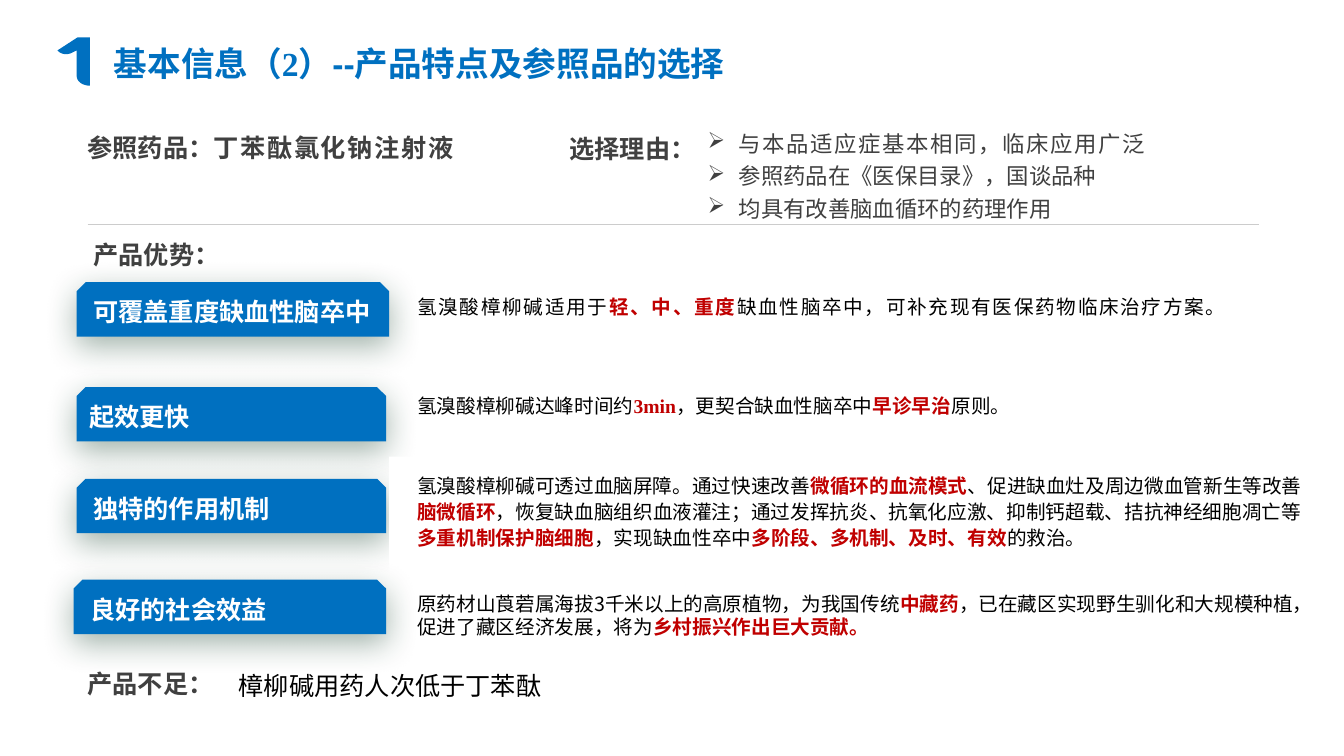
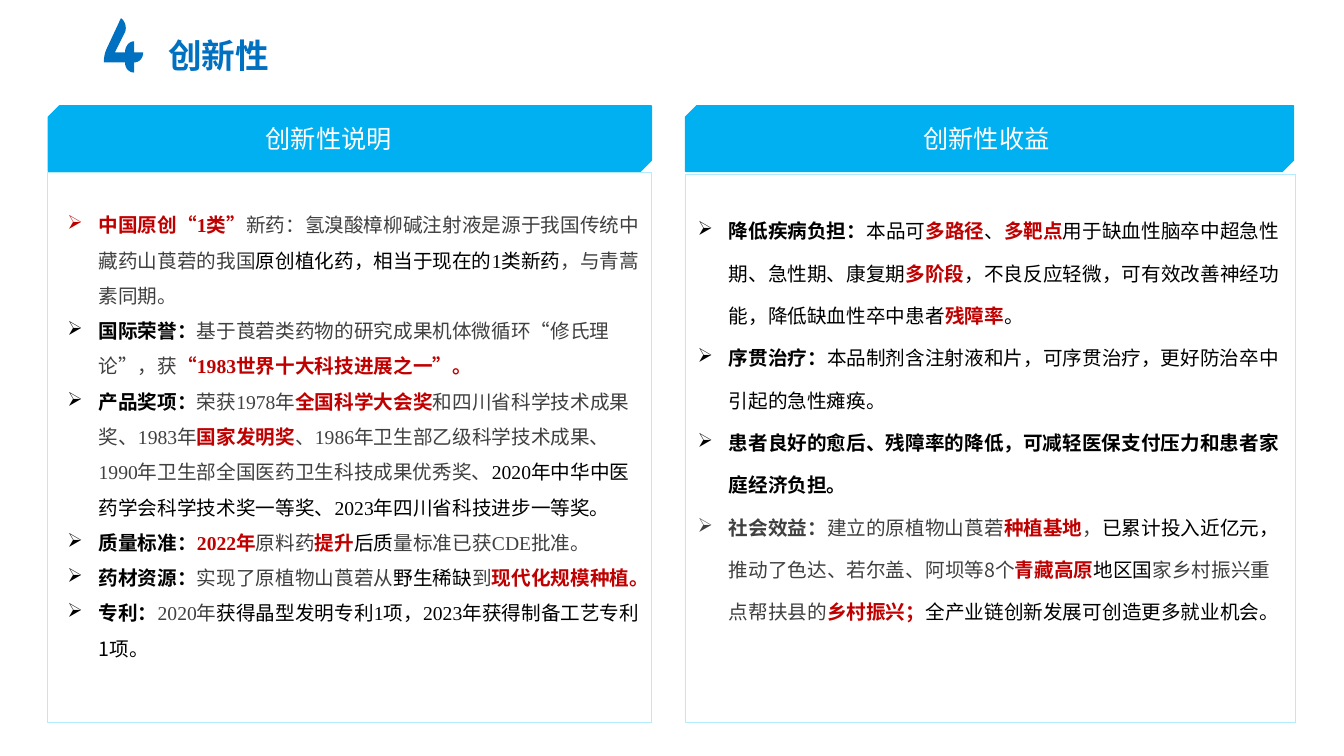
from lxml import etree
from pptx import Presentation
from pptx import util as u
from pptx.dml.color import RGBColor
from pptx.enum import shapes, text
from pptx.oxml.ns import qn

PX = 9144  # 100 px to the inch
CJK, LATIN, SERIF = "Noto Sans CJK SC", "Arial", "Times New Roman"
HUES = {"blue": "0070C0", "sky": "00B0F0", "pale": "B3EBFF", "red": "C00000",
        "gray": "404040", "black": "000000", "white": "FFFFFF",
        "rule": "CCCCCC", "shade": "1A4530"}

# Run styles: hue, bold, letter spacing (1/100 pt), Latin face
STYLES = {
    "k": ("black", False, 0, None), "K": ("black", True, 0, None),
    "g": ("gray", False, 0, None), "G": ("gray", True, 0, None),
    "r": ("red", True, 0, None), "W": ("white", True, 0, None),
    "w": ("white", False, 0, None), "b": ("blue", True, 0, None),
    "t": ("blue", True, 0, SERIF), "c": ("black", False, 0, CJK),
    "n": ("black", False, 120, None), "e": ("red", True, 120, None),
    "s": ("gray", False, 120, None), "S": ("gray", True, 120, None),
}

# Outlines of the section numbers: 2 values make a line, 6 a curve
DIGITS = {
    1: [(76, 50), (72, 52), (67, 55, 60, 54, 57, 50), (77, 37), (89, 37),
        (89, 85), (82, 85, 76, 81, 76, 75)],
    4: [(124, 62), (103, 62), (103, 57, 104, 52, 106, 48), (120, 18),
        (124, 21, 126, 27, 124, 32), (114, 52), (124, 52),
        (124, 46, 128, 41, 133, 41), (133, 52), (142, 52),
        (142, 58, 138, 62, 133, 62), (133, 72), (128, 72, 124, 68, 124, 62)],
}

# Advantages: tab box, tab indent, text box, line spacing, Latin face, text
ROWS = [
    ((76, 280, 310, 54), 12, "可覆盖重度缺血性脑卒中", (404, 285, 863, 36), 1.1, CJK,
     "n氢溴酸樟柳碱适用于|e轻、中、重度|n缺血性脑卒中，可补充现有医保药物临床治疗方案。"),
    ((76, 384, 307, 54), 8, "起效更快", (404, 386, 838, 34), 1, SERIF,
     "k氢溴酸樟柳碱达峰时间约|r3min|k，更契合缺血性脑卒中|r早诊早治|k原则。"),
    ((76, 475, 307, 54), 12, "独特的作用机制", (404, 463, 901, 88), 1.1, CJK,
     "k氢溴酸樟柳碱可透过血脑屏障。通过快速改善|r微循环的血流模式"
     "|k、促进缺血灶及周边微血管新生等改善|r脑微循环"
     "|k，恢复缺血脑组织血液灌注；通过发挥抗炎、抗氧化应激、抑制钙超载、拮抗神经细胞凋亡等"
     "|r多重机制保护脑细胞|k，实现缺血性卒中|r多阶段、多机制、及时、有效|k的救治。"),
    ((73, 575, 310, 54), 12, "良好的社会效益", (404, 582, 905, 57), 1, CJK,
     "k原药材山莨菪属海拔3千米以上的高原植物，为我国传统|r中藏药"
     "|k，已在藏区实现野生驯化和大规模种植，促进了藏区经济发展，将为"
     "|r乡村振兴作出巨大贡献。"),
]

REASONS = ["s与本品适应症基本相同，临床应用广泛", "g参照药品在《医保目录》，国谈品种",
           "g均具有改善脑血循环的药理作用"]

CLAIMS = [
    "r中国原创“1类”|g新药：氢溴酸樟柳碱注射液是源于我国传统中藏药山莨菪的我国"
    "|k原创植化药，相当于现在的1类新药|g，与青蒿素同期。",
    "K国际荣誉：|g基于莨菪类药物的研究成果机体微循环“修氏理论”，获"
    "|r“1983世界十大科技进展之一”。",
    "K产品奖项：|g荣获1978年|r全国科学大会奖|g和四川省科学技术成果奖、1983年"
    "|r国家发明奖|g、1986年卫生部乙级科学技术成果、1990年卫生部全国医药卫生科技成果优秀奖、"
    "|k2020年中华中医药学会科学技术奖一等奖、2023年四川省科技进步一等奖。",
    "K质量标准：|r2022年|g原料药|r提升|k后质|g量标准已获CDE批准。",
    "K药材资源：|g实现了原植物山莨菪从|k野生稀缺|g到|r现代化规模种植。",
    "K专利：|g2020年|k获得晶型发明专利1项，2023年获得制|c备工艺专利1项。",
]

GAINS = [
    "K降低疾病负担：|k本品可|r多路径|k、|r多靶点|k用于缺血性脑卒中超急性期、急性期、康复期"
    "|r多阶段|k，不良反应轻微，可有效改善神经功能，降低缺血性卒中患者|r残障率|k。",
    "K序贯治疗：|k本品制剂含注射液和片，可序贯治疗，更好防治卒中引起的急性瘫痪。",
    "K患者良好的愈后、残障率的降低，可减轻医保支付压力和患者家庭经济负担。",
    "G社会效益：|g建立的原植物山莨菪|r种植基地|g，|k已累计投入近亿元，"
    "|g推动了色达、若尔盖、阿坝等8个|r青藏高原|k地区国|g家乡村振兴重点帮扶县的"
    "|r乡村振兴；|k全产业链创新发展可创造更多就业机会。",
]


def hue(name):
    return RGBColor.from_string(HUES[name])


def px(*vals):
    return [u.Emu(round(v * PX)) for v in vals]


def add(node, tag, **attrs):
    return etree.SubElement(node, qn(tag), attrs)


# Text
def dress(font, key):
    name, bold, gap, face = STYLES[key]
    font.color.rgb, font.bold = hue(name), bold
    if gap:
        font._rPr.set("spc", str(gap))
    if face:
        font.name = face


def write(frame, lines, size, face=CJK, space=1, bullet=False, align="LEFT"):
    """Each line is runs parted by |, led by a style key."""
    frame.word_wrap = True
    for i, line in enumerate(lines):
        para = frame.add_paragraph() if i else frame.paragraphs[0]
        para.alignment = text.PP_ALIGN[align]
        para.line_spacing = space
        if bullet:
            props = para._p.get_or_add_pPr()
            dent = px(31)[0]
            props.set("marL", str(dent))
            props.set("indent", str(-dent))
            add(props, "a:buChar", char="➢")
        para.font.size, para.font.name = u.Pt(size), face
        add(para.font._rPr, "a:ea", typeface=CJK)
        parts = line.split("|")
        for part in parts:
            run = para.add_run()
            run.text = part[1:]
            dress(run.font if len(parts) > 1 else para.font, part[0])


def label(slide, area, lines, size=18, **look):
    write(slide.shapes.add_textbox(*px(*area)).text_frame, lines, size, **look)


# Shapes
def block(slide, kind, area, fill, edge=None):
    shape = slide.shapes.add_shape(shapes.MSO_SHAPE[kind], *px(*area))
    shape.shadow.inherit = False
    shape.fill.solid()
    shape.fill.fore_color.rgb = hue(fill)
    if edge:
        shape.line.color.rgb, shape.line.width = hue(edge), u.Pt(1)
    else:
        shape.line.fill.background()
    return shape


def tab(slide, area, dent, words):
    shape = block(slide, "SNIP_2_SAME_RECTANGLE", area, "blue")
    glow = add(shape._element.spPr.find(qn("a:effectLst")), "a:outerShdw",
               blurRad=str(u.Pt(23)), dist=str(u.Pt(7)), dir="5400000",
               algn="t", rotWithShape="0")
    add(add(glow, "a:srgbClr", val=HUES["shade"]), "a:alpha", val="40000")
    frame = shape.text_frame
    frame.margin_left = px(dent)[0]
    frame.margin_right = frame.margin_top = frame.margin_bottom = 0
    frame.vertical_anchor = text.MSO_ANCHOR.MIDDLE
    write(frame, ["W" + words], 18)


def rule(slide, left, right, top):
    line = slide.shapes.add_connector(
        shapes.MSO_CONNECTOR.STRAIGHT, *px(left, top, right, top))
    line.line.color.rgb, line.line.width = hue("rule"), u.Pt(1)
    add(line._element.spPr, "a:effectLst")


def digit(slide, num):
    pts = []
    for seg in DIGITS[num]:
        if len(seg) == 2:
            pts.append(seg)
            continue
        ctrl = [pts[-1], seg[:2], seg[2:4], seg[4:]]
        for t in (k / 8 for k in range(1, 9)):
            mix = ((1 - t) ** 3, 3 * t * (1 - t) ** 2, 3 * t * t * (1 - t), t ** 3)
            pts.append(tuple(sum(m * c[i] for m, c in zip(mix, ctrl)) for i in (0, 1)))
    pen = slide.shapes.build_freeform(*px(*pts[0]), scale=1.0)
    pen.add_line_segments([px(*pt) for pt in pts[1:]], close=True)
    shape = pen.convert_to_shape()
    shape.shadow.inherit = False
    shape.fill.solid()
    shape.fill.fore_color.rgb = hue("blue")
    shape.line.fill.background()


def start(deck, num, area, words):
    """New slide with section number and title."""
    slide = deck.slides.add_slide(deck.slide_layouts[5])
    title = slide.shapes.title
    title.left, title.top, title.width, title.height = px(*area)
    frame = title.text_frame
    frame.auto_size = text.MSO_AUTO_SIZE.NONE
    frame.vertical_anchor = text.MSO_ANCHOR.TOP
    write(frame, [words], 24, face=LATIN, space=0.9)
    digit(slide, num)
    return slide


# Slides
def basics(deck):
    slide = start(deck, 1, (103, 42, 1200, 65),
                  "b基本信息（|t2|b）--产品特点及参照品的选择")

    # Reference drug and reasons
    label(slide, (77, 126, 408, 40), ["G参照药品：|S丁苯酞氯化钠注射液"])
    label(slide, (555, 121, 140, 43), ["G选择理由："], space=1.2)
    label(slide, (692, 119, 461, 107), REASONS, 16, space=1.2, bullet=True)
    rule(slide, 87, 1249, 223)

    # Advantages
    label(slide, (83, 233, 150, 40), ["G产品优势："])
    for area, dent, name, *_ in ROWS[:3]:
        tab(slide, area, dent, name)
    block(slide, "RECTANGLE", (386, 453, 919, 129), "white")
    tab(slide, *ROWS[3][0:1], *ROWS[3][1:3])
    for *_, area, space, face, words in ROWS:
        label(slide, area, [words], 14, face=face, space=space)

    # Weak point
    label(slide, (77, 658, 168, 40), ["G产品不足："])
    label(slide, (227, 660, 667, 40), ["k樟柳碱用药人次低于丁苯酞"])


def panel(slide, head, name, spot, body):
    band = block(slide, "SNIP_2_DIAG_RECTANGLE", head, "sky", "sky")
    band.adjustments[0], band.adjustments[1] = 0.17, 0
    block(slide, "RECTANGLE", body, "white", "pale")
    label(slide, spot, ["w" + name], align="CENTER")


def novelty(deck):
    slide = start(deck, 4, (157, 34, 328, 65), "b创新性")

    # Claims on the left
    panel(slide, (48, 105, 598, 65), "创新性说明", (18, 117, 616, 40),
          (47, 171, 599, 546))
    label(slide, (57, 195, 588, 515), CLAIMS, 14, face=SERIF, space=1.5, bullet=True)

    # Gains on the right
    panel(slide, (680, 105, 603, 65), "创新性收益", (676, 117, 605, 40),
          (680, 173, 605, 544))
    label(slide, (682, 194, 603, 477), GAINS, 14, space=1.8, bullet=True)


def main():
    deck = Presentation()
    deck.slide_width, deck.slide_height = px(1333, 750)
    basics(deck)
    novelty(deck)
    deck.save("out.pptx")


if __name__ == "__main__":
    main()
